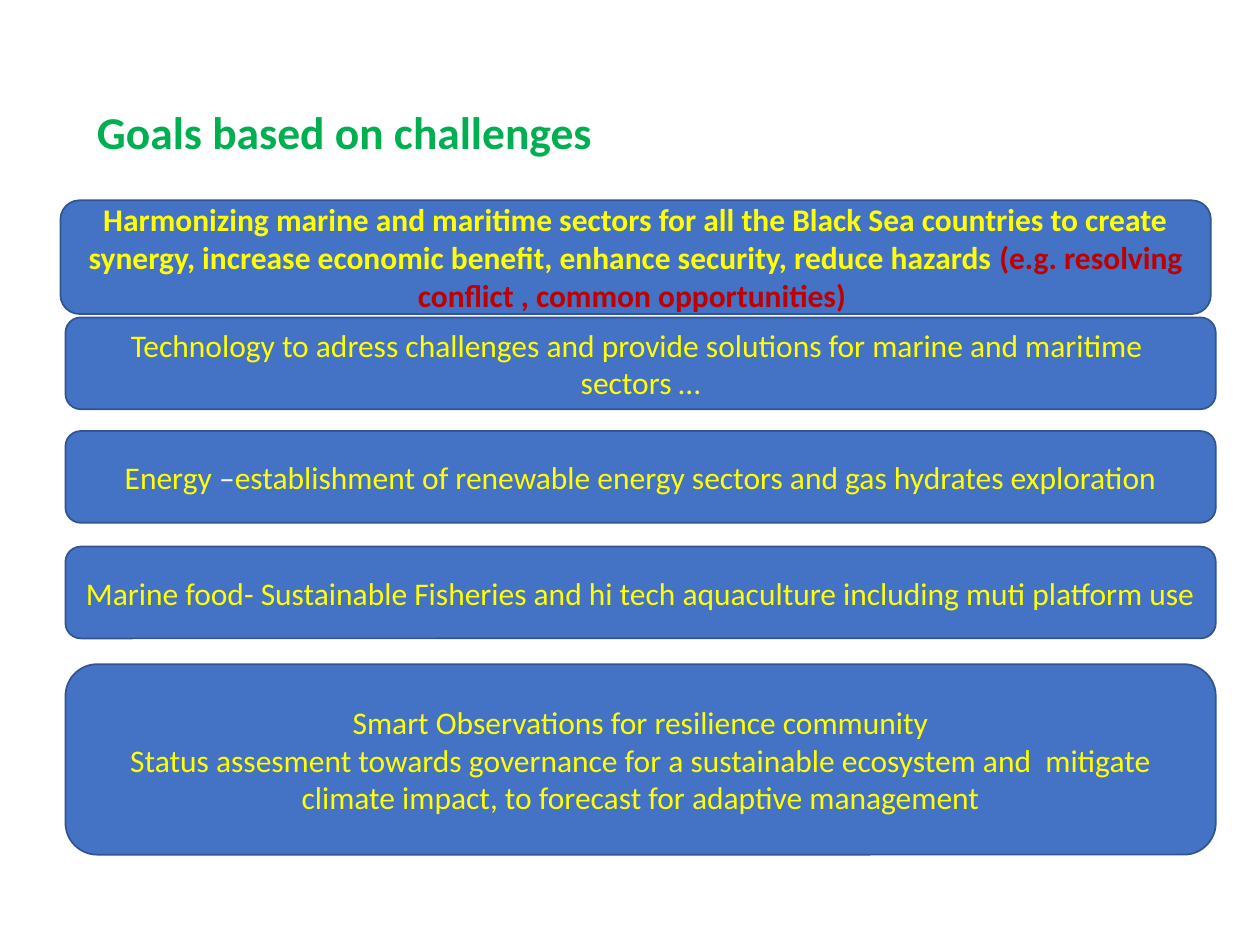
import pptx
import pptx.util
import pptx.dml.color
import pptx.enum.shapes
import pptx.enum.text

Cm = pptx.util.Cm
Pt = pptx.util.Pt
ALIGN = pptx.enum.text.PP_ALIGN
ANCHOR = pptx.enum.text.MSO_ANCHOR

HUES = {
    "blue": "4472C4",
    "edge": "325491",
    "green": "00B050",
    "yellow": "FFFF00",
    "white": "FFFFFF",
    "red": "C00000",
}
FONT = "Calibri"
WIDTH = 23.19

TITLE = "Goals based on challenges"
# Each goal: left, top, height in cm, bold, paragraphs of (text, colour) runs
GOALS = [
    (1.22, 4.04, 2.29, True, [[
        ("Harmonizing marine and maritime sectors for all the Black Sea "
         "countries to create synergy, increase economic benefit, enhance "
         "security, reduce hazards ", "yellow"),
        ("(e.g. resolving conflict , common opportunities) ", "red")]]),
    (1.32, 6.4, 1.85, False, [[
        ("Technology to adress challenges and provide solutions for marine "
         "and maritime  sectors …", "yellow")]]),
    (1.32, 8.69, 1.85, False, [[
        ("Energy", "yellow"),
        (" –", "white"),
        ("establishment of renewable energy sectors and gas hydrates "
         "exploration", "yellow")]]),
    (1.32, 11.02, 1.85, False, [[
        ("Marine food- Sustainable Fisheries and hi tech aquaculture "
         "including muti platform use", "yellow")]]),
    (1.32, 13.39, 3.84, False, [
        [("Smart Observations for resilience community", "yellow")],
        [("Status assesment towards governance for a sustainable ecosystem "
          "and  mitigate climate impact, to forecast for adaptive "
          "management", "yellow")]]),
]


def tint(hue):
    return pptx.dml.color.RGBColor.from_string(HUES[hue])


def add_run(para, text, hue, size, bold):
    run = para.add_run()
    run.text = text
    run.font.name = FONT
    run.font.size = Pt(size)
    run.font.bold = bold
    run.font.color.rgb = tint(hue)


def add_title(slide):
    title = slide.shapes.title
    title.left, title.top = Cm(1.7), Cm(1.96)
    title.width, title.height = Cm(10.62), Cm(1.37)
    frame = title.text_frame
    frame.word_wrap = False
    frame.auto_size = pptx.enum.text.MSO_AUTO_SIZE.NONE
    frame.vertical_anchor = ANCHOR.TOP
    para = frame.paragraphs[0]
    para.alignment = ALIGN.LEFT
    add_run(para, TITLE, "green", 26, True)


def add_goal(slide, left, top, height, bold, paras):
    box = slide.shapes.add_shape(
        pptx.enum.shapes.MSO_SHAPE.ROUNDED_RECTANGLE,
        Cm(left), Cm(top), Cm(WIDTH), Cm(height))
    box.shadow.inherit = False
    box.fill.solid()
    box.fill.fore_color.rgb = tint("blue")
    box.line.color.rgb = tint("edge")
    box.line.width = Pt(1)
    frame = box.text_frame
    frame.word_wrap = True
    frame.vertical_anchor = ANCHOR.MIDDLE
    for i, runs in enumerate(paras):
        para = frame.add_paragraph() if i else frame.paragraphs[0]
        para.alignment = ALIGN.CENTER
        for text, hue in runs:
            add_run(para, text, hue, 18, bold)


def main():
    deck = pptx.Presentation()
    deck.slide_width, deck.slide_height = Cm(25.4), Cm(19.05)
    slide = deck.slides.add_slide(deck.slide_layouts.get_by_name("Title Only"))
    add_title(slide)
    for goal in GOALS:
        add_goal(slide, *goal)
    deck.save("out.pptx")


if __name__ == "__main__":
    main()
